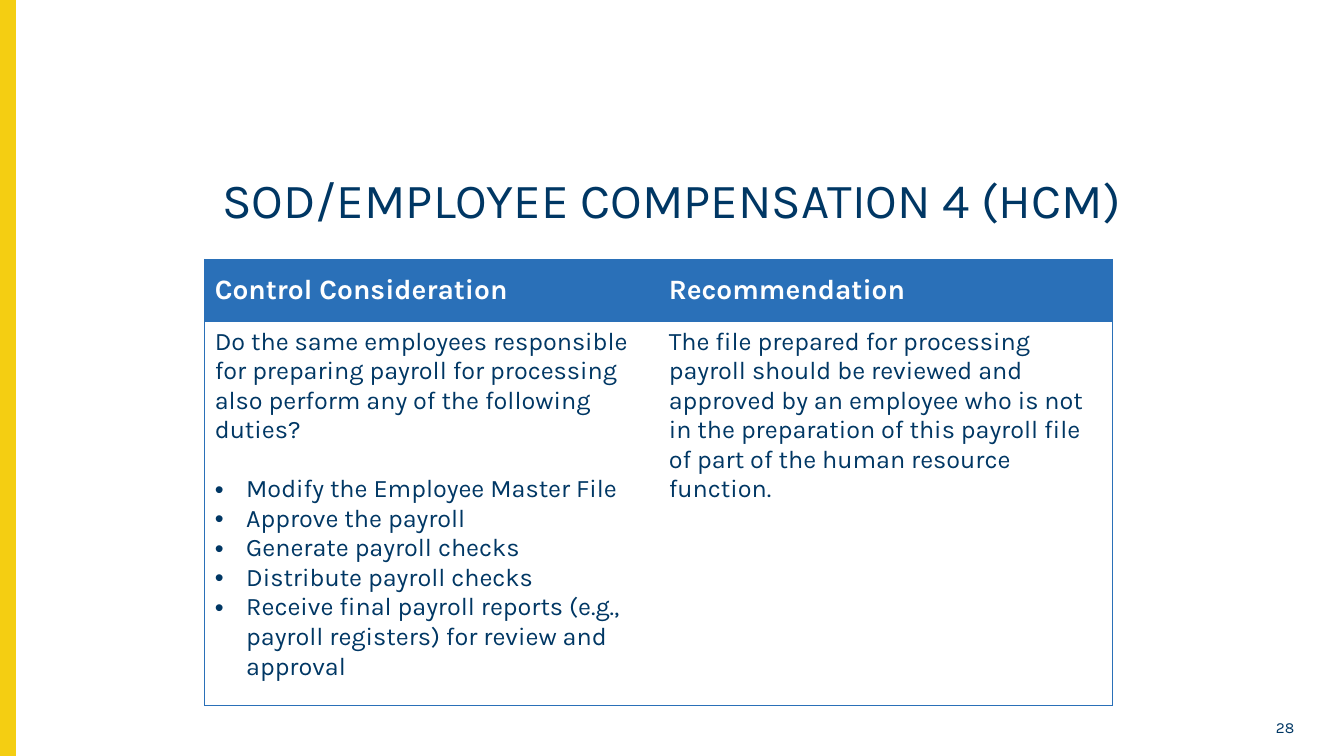
from lxml import etree
from pptx import Presentation
from pptx.dml.color import RGBColor
from pptx.enum.shapes import MSO_SHAPE
from pptx.enum.text import MSO_ANCHOR, PP_ALIGN
from pptx.oxml.ns import qn
from pptx.util import Cm, Pt

RECT = MSO_SHAPE.RECTANGLE
TOP, MIDDLE = MSO_ANCHOR.TOP, MSO_ANCHOR.MIDDLE
CENTER, RIGHT = PP_ALIGN.CENTER, PP_ALIGN.RIGHT
FONT = "Karla"
NAVY, BLUE, GOLD, WHITE = "003764", "2A70B8", "F4CE12", "FFFFFF"

HEADS = ["Control Consideration", "Recommendation"]
QUERY = ("Do the same employees responsible for preparing payroll for "
         "processing also perform any of the following duties?")
DUTIES = [
    "Modify the Employee Master File",
    "Approve the payroll",
    "Generate payroll checks",
    "Distribute payroll checks",
    "Receive final payroll reports (e.g., payroll registers) for review "
    "and approval",
]
ADVICE = ("The file prepared for processing payroll should be reviewed and "
          "approved by an employee who is not in the preparation of this "
          "payroll file of part of the human resource function.")


def color(code):
    return RGBColor.from_string(code)


def style(para, size, code=NAVY, bold=False):
    for run in para.runs:
        font = run.font
        font.name, font.size, font.bold = FONT, Pt(size), bold
        font.color.rgb = color(code)


def bullet(para):
    props = para._p.get_or_add_pPr()
    props.set("marL", str(Cm(0.79)))
    props.set("indent", str(Cm(-0.79)))
    etree.SubElement(props, qn("a:buFont")).set("typeface", "Arial")
    etree.SubElement(props, qn("a:buChar")).set("char", "•")


def border(cell, sides):
    props = cell._tc.get_or_add_tcPr()
    for side in "LRTB":
        line = etree.SubElement(props, qn("a:ln" + side))
        if side in sides:
            line.set("w", str(Pt(0.5)))
            fill = etree.SubElement(line, qn("a:solidFill"))
            etree.SubElement(fill, qn("a:srgbClr")).set("val", BLUE)
        else:
            line.set("w", "0")
            etree.SubElement(line, qn("a:noFill"))


def add_bar(slide, height):
    bar = slide.shapes.add_shape(RECT, 0, 0, Cm(0.38), height)
    bar.shadow.inherit = False
    bar.fill.solid()
    bar.fill.fore_color.rgb = color(GOLD)
    bar.line.color.rgb = color(GOLD)
    bar.line.width = Pt(1)


def add_title(slide, text):
    title = slide.shapes.title
    title.left, title.top = Cm(3.56), Cm(4.32)
    title.width, title.height = Cm(26.75), Cm(2.21)
    frame = title.text_frame
    frame.text = text
    frame.vertical_anchor = TOP
    para = frame.paragraphs[0]
    para.alignment = CENTER
    para.line_spacing = 0.9
    style(para, 35)


def fill_cell(cell, texts, size, code, bold=False):
    """Write the first text plainly and the others as a bulleted list."""
    frame = cell.text_frame
    frame.text = texts[0]
    for index, text in enumerate(texts[1:]):
        para = frame.add_paragraph()
        para.text = text
        bullet(para)
        if index == 0:
            para.space_before = Pt(21)
    for para in frame.paragraphs:
        style(para, size, code, bold)


def add_grid(slide):
    shape = slide.shapes.add_table(2, 2, Cm(5.16), Cm(6.53),
                                   Cm(22.88), Cm(11.25))
    table = shape.table
    for column in table.columns:
        column.width = Cm(11.44)
    table.rows[0].height, table.rows[1].height = Cm(1.58), Cm(9.67)

    # Outer edges and fills
    for row, edge in enumerate("TB"):
        for col, side in enumerate("LR"):
            cell = table.cell(row, col)
            border(cell, edge + side)
            cell.fill.solid()
            cell.fill.fore_color.rgb = color(WHITE if row else BLUE)
            cell.vertical_anchor = TOP if row else MIDDLE

    # Wording
    for col, head in enumerate(HEADS):
        fill_cell(table.cell(0, col), [head], 20, WHITE, True)
    fill_cell(table.cell(1, 0), [QUERY] + DUTIES, 18, NAVY)
    fill_cell(table.cell(1, 1), [ADVICE], 18, NAVY)


def add_page(slide, number):
    box = slide.shapes.add_textbox(Cm(31.14), Cm(18.01), Cm(1.73), Cm(0.66))
    frame = box.text_frame
    frame.word_wrap = True
    frame.vertical_anchor = MIDDLE
    frame.text = number
    para = frame.paragraphs[0]
    para.alignment = RIGHT
    style(para, 11)


def main():
    deck = Presentation()
    deck.slide_width, deck.slide_height = Cm(33.87), Cm(19.05)
    slide = deck.slides.add_slide(deck.slide_layouts[5])
    add_bar(slide, deck.slide_height)
    add_grid(slide)
    add_title(slide, "SOD/EMPLOYEE COMPENSATION 4 (HCM)")
    add_page(slide, "28")
    deck.save("out.pptx")


if __name__ == "__main__":
    main()
